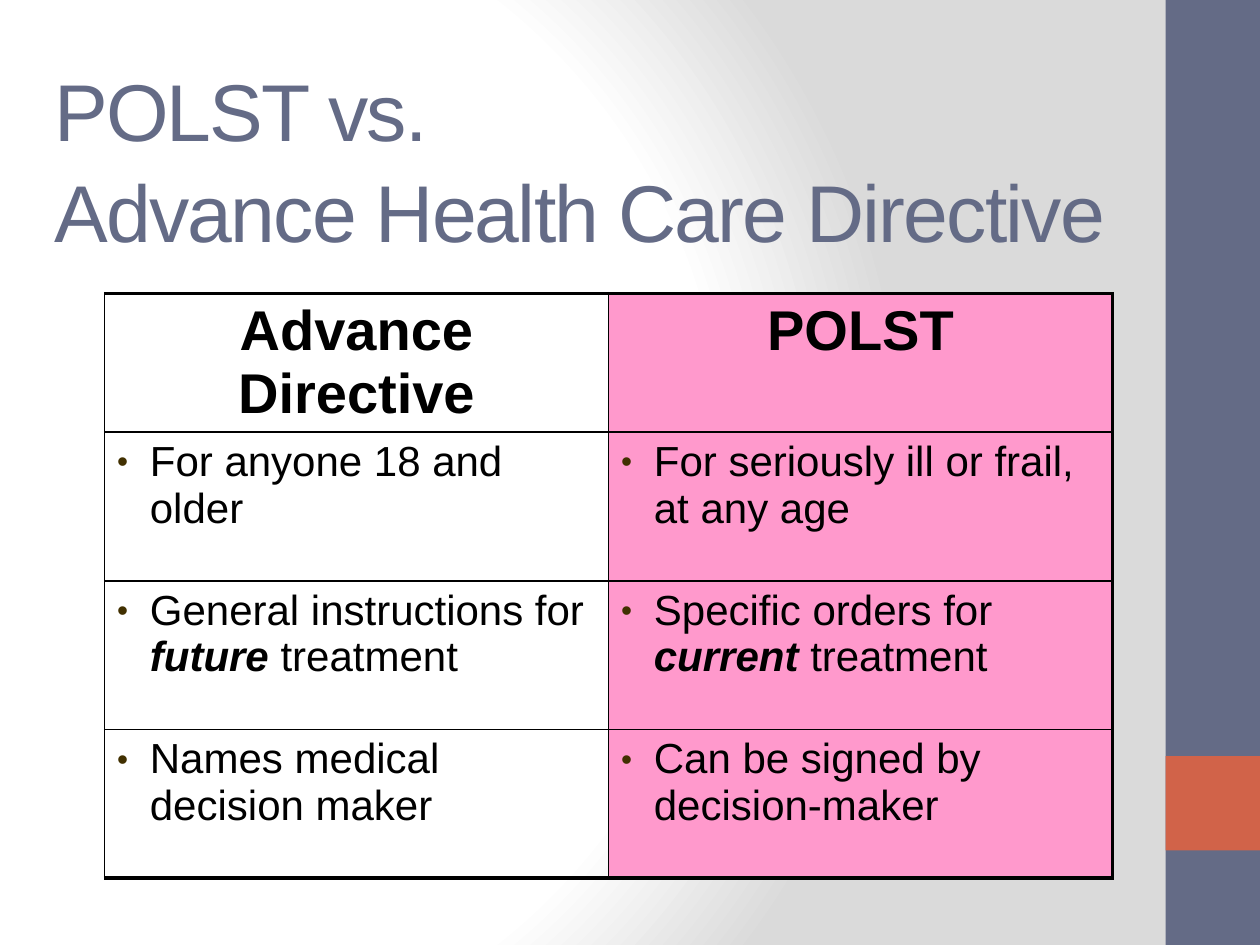
from pptx import Presentation
from pptx.dml.color import RGBColor
from pptx.enum.shapes import MSO_SHAPE
from pptx.enum.text import MSO_ANCHOR, MSO_AUTO_SIZE, PP_ALIGN
from pptx.oxml import parse_xml
from pptx.oxml.ns import nsdecls
from pptx.util import Inches, Pt

COLORS = {"slate": "646B86", "rust": "D16349", "pink": "FF99CC", "white": "FFFFFF",
          "grey": "DADADA", "black": "000000", "bullet": "413000"}
FONT = "Arial"
TITLE = ["POLST vs.", "Advance Health Care Directive"]
HEADERS = ["Advance Directive", "POLST"]
ROWS = [
    [["For anyone 18 and older"], ["For seriously ill or frail, at any age"]],
    [["General instructions for ", "future", " treatment"],
     ["Specific orders for ", "current", " treatment"]],
    [["Names medical decision maker"], ["Can be signed by decision-maker"]],
]
SIDEBAR = [("slate", 0, 7.5), ("rust", 6, 0.75)]
STOPS = [("white", 0), ("white", 75), ("grey", 100)]
HEADER_H, ROW_H, COL_W = 1.1, 1.18, 4
THIN, THICK = 1, 2.25


def rgb(name):
    return RGBColor.from_string(COLORS[name])


def xml(tag, attrs="", inner=""):
    return parse_xml(f'<{tag} {nsdecls("a", "p")} {attrs}>{inner}</{tag}>')


def solid(name, alpha=100):
    return (f'<a:solidFill><a:srgbClr val="{COLORS[name]}">'
            f'<a:alpha val="{alpha * 1000}"/></a:srgbClr></a:solidFill>')


def add_run(p, text, size, color, bold=False, italic=False):
    r = p.add_run()
    r.text = text
    f = r.font
    f.name, f.size, f.bold, f.italic = FONT, Pt(size), bold, italic
    f.color.rgb = rgb(color)
    return r


def set_background(s):
    stops = "".join(f'<a:gs pos="{pos * 1000}"><a:srgbClr val="{COLORS[c]}"/></a:gs>'
                    for c, pos in STOPS)
    s.element.cSld.insert(0, xml("p:bg", inner=(
        f'<p:bgPr><a:gradFill rotWithShape="1"><a:gsLst>{stops}</a:gsLst>'
        '<a:path path="circle"><a:fillToRect l="20000" t="50000" r="100000" b="50000"/>'
        '</a:path></a:gradFill><a:effectLst/></p:bgPr>')))


def style_cell(cell, row, col):
    tcPr = cell._tc.get_or_add_tcPr()
    widths = {"L": THIN, "R": THICK if col == 1 else THIN,
              "T": THICK if row == 0 else THIN,
              "B": THICK if row == len(ROWS) else THIN}
    for side, width in widths.items():
        tcPr.append(xml(f"a:ln{side}", f'w="{Pt(width)}"', solid("black")))
    if col == 1:
        tcPr.append(xml("a:solidFill", inner=f'<a:srgbClr val="{COLORS["pink"]}"/>'))
    elif row == 0:
        tcPr.append(parse_xml(solid("white", 50).replace(
            "<a:solidFill>", f'<a:solidFill {nsdecls("a")}>')))
    else:
        cell.fill.background()


def space_before(p):
    pPr = p._p.get_or_add_pPr()
    pPr.append(xml("a:spcBef", inner='<a:spcPct val="20000"/>'))
    return pPr


def add_bullet(p):
    pPr = space_before(p)
    pPr.set("marL", str(Inches(0.26)))
    pPr.set("indent", str(Inches(-0.26)))
    pPr.append(xml("a:buClr", inner=f'<a:srgbClr val="{COLORS["bullet"]}"/>'))
    pPr.append(xml("a:buSzPct", 'val="75000"'))
    pPr.append(xml("a:buFont", f'typeface="{FONT}"'))
    pPr.append(xml("a:buChar", 'char="•"'))


def add_title(s):
    title = s.shapes.title
    title.left, title.top = Inches(0.33), Inches(0.5)
    title.width, title.height = Inches(9.42), Inches(1.5)
    tf = title.text_frame
    tf.word_wrap, tf.auto_size = True, MSO_AUTO_SIZE.NONE
    tf.vertical_anchor = MSO_ANCHOR.MIDDLE
    p = tf.paragraphs[0]
    p.alignment, p.line_spacing = PP_ALIGN.LEFT, 1.05
    for i, line in enumerate(TITLE):
        if i:
            p.add_line_break()
        add_run(p, line, 46, "slate").font._element.set("spc", "-100")


def add_sidebar(s):
    for color, top, height in SIDEBAR:
        sp = s.shapes.add_shape(MSO_SHAPE.RECTANGLE, Inches(9.25), Inches(top),
                                Inches(0.75), Inches(height))
        sp.shadow.inherit = False
        sp.fill.solid()
        sp.fill.fore_color.rgb = rgb(color)
        sp.line.fill.background()


def add_comparison(s):
    heights = [HEADER_H] + [ROW_H] * len(ROWS)
    table = s.shapes.add_table(len(heights), len(HEADERS), Inches(0.83), Inches(2.33),
                               Inches(COL_W * len(HEADERS)), Inches(sum(heights))).table
    table.first_row = table.horz_banding = False
    for column in table.columns:
        column.width = Inches(COL_W)
    for row, height in zip(table.rows, heights):
        row.height = Inches(height)
    for i, texts in enumerate([[[h] for h in HEADERS]] + ROWS):
        for j, runs in enumerate(texts):
            cell = table.cell(i, j)
            style_cell(cell, i, j)
            p = cell.text_frame.paragraphs[0]
            if i == 0:
                p.alignment = PP_ALIGN.CENTER
                space_before(p)
                add_run(p, runs[0], 32, "black", bold=True)
                continue
            add_bullet(p)
            for k, text in enumerate(runs):
                add_run(p, text, 24, "black", bold=k == 1, italic=k == 1)


def main():
    prs = Presentation()
    prs.slide_width, prs.slide_height = Inches(10), Inches(7.5)
    s = prs.slides.add_slide(prs.slide_layouts[5])
    set_background(s)
    add_sidebar(s)
    add_title(s)
    add_comparison(s)
    prs.save("out.pptx")


if __name__ == "__main__":
    main()
